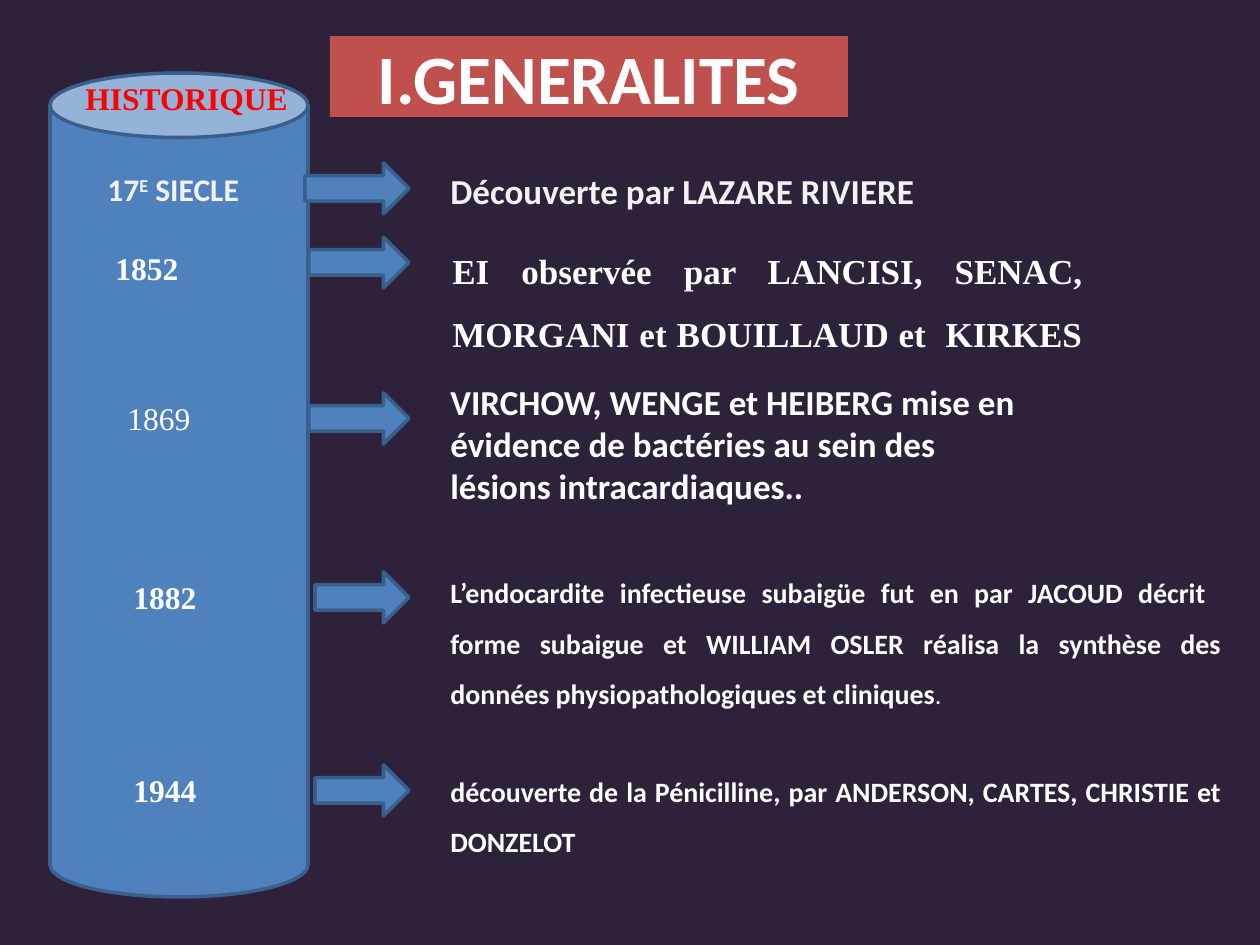
from dataclasses import dataclass

import pptx
import pptx.dml.color
import pptx.enum.shapes
import pptx.enum.text
import pptx.util

RGBColor = pptx.dml.color.RGBColor
Shape = pptx.enum.shapes.MSO_SHAPE
Align = pptx.enum.text.PP_ALIGN

NIGHT = RGBColor(0x2D, 0x22, 0x3A)
BLUE = RGBColor(0x4F, 0x81, 0xBD)
BLUE_EDGE = RGBColor(0x3A, 0x5F, 0x8C)
BRICK = RGBColor(0xC0, 0x50, 0x4D)
WHITE = RGBColor(0xFF, 0xFF, 0xFF)
PALE = RGBColor(0xF2, 0xF2, 0xF2)
RED = RGBColor(0xFF, 0x00, 0x00)

SANS = "Calibri"
SERIF = "Times New Roman"
PX_PER_INCH = 126
ARROW_TIP = 409
ARROW_HEIGHT = 51


@dataclass(frozen=True)
class Span:
    text: str
    size: float
    font: str = SANS
    color: RGBColor = WHITE
    bold: bool = True
    raised: bool = False


@dataclass(frozen=True)
class Para:
    spans: tuple[Span, ...]
    spread: bool = False  # justified with wide line spacing
    before: float = 0


@dataclass(frozen=True)
class Label:
    place: tuple[int, int, int, int]
    paras: tuple[Para, ...]
    wrap: bool = True


@dataclass(frozen=True)
class Event:
    arrow_left: int
    arrow_top: int
    date: Label


def px(length: int) -> int:
    return round(length * pptx.util.Inches(1) / PX_PER_INCH)


def add_span(para, item: Span) -> None:
    span = para.add_run()
    span.text = item.text
    span.font.size = pptx.util.Pt(item.size)
    span.font.name = item.font
    span.font.bold = item.bold
    span.font.color.rgb = item.color
    if item.raised:
        span._r.get_or_add_rPr().set("baseline", "30000")


def add_label(page, label: Label) -> None:
    box = page.shapes.add_textbox(*map(px, label.place))
    frame = box.text_frame
    frame.word_wrap = label.wrap
    frame.auto_size = pptx.enum.text.MSO_AUTO_SIZE.SHAPE_TO_FIT_TEXT
    for index, item in enumerate(label.paras):
        para = frame.add_paragraph() if index else frame.paragraphs[0]
        if item.spread:
            para.alignment = Align.JUSTIFY
            para.line_spacing = 1.5
            para.space_before = pptx.util.Pt(item.before)
        for span in item.spans:
            add_span(para, span)


def add_block(page, kind, place: tuple[int, int, int, int], fill: RGBColor,
              edge: RGBColor | None = None):
    block = page.shapes.add_shape(kind, *map(px, place))
    block.shadow.inherit = False
    block.fill.solid()
    block.fill.fore_color.rgb = fill
    if edge is None:
        block.line.fill.background()
    else:
        block.line.color.rgb = edge
        block.line.width = pptx.util.Pt(2)
    return block


def year(text: str, place: tuple[int, int, int, int], bold: bool = True) -> Label:
    return Label(place, (Para((Span(text, 18, SERIF, bold=bold),)),), wrap=False)


HEADING = Label((73, 73, 229, 89), (Para((Span("HISTORIQUE", 18, SERIF, RED),)),), wrap=False)

EVENTS = (
    Event(305, 163, Label((95, 164, 169, 50), (Para((
        Span("17", 18, color=PALE),
        Span("E", 18, color=PALE, raised=True),
        Span(" SIECLE", 18, color=PALE))),))),
    Event(309, 237, Label((103, 224, 169, 63), (
        Para((Span("1852", 18, SERIF),), spread=True, before=3.6),))),
    Event(309, 393, year("1869", (115, 393, 89, 51), bold=False)),
    Event(315, 572, year("1882", (121, 572, 97, 51))),
    Event(315, 765, year("1944", (121, 765, 89, 51))),
)

STORIES = (
    Label((438, 163, 627, 55), (
        Para((Span("Découverte par LAZARE RIVIERE", 20, color=PALE),)),)),
    Label((440, 222, 655, 132), (
        Para((Span("EI observée par LANCISI, SENAC, MORGANI et BOUILLAUD et  KIRKES ",
                   20, SERIF),), spread=True, before=4),)),
    Label((438, 374, 605, 140), (
        Para((Span("VIRCHOW, WENGE et HEIBERG mise en évidence de bactéries "
                   "au sein des lésions intracardiaques..", 20),)),)),
    Label((438, 553, 796, 318), (
        Para((Span("L’endocardite infectieuse subaigüe fut en par JACOUD décrit  "
                   "forme subaigue et WILLIAM OSLER réalisa la synthèse des "
                   "données physiopathologiques et cliniques", 16),
              Span(". ", 12)), spread=True, before=3.2),
        Para((Span("découverte de la Pénicilline, par ANDERSON, CARTES, "
                   "CHRISTIE et DONZELOT", 16),), spread=True, before=27))),
)


def main() -> None:
    deck = pptx.Presentation()
    deck.slide_width = pptx.util.Inches(10)
    deck.slide_height = pptx.util.Inches(7.5)
    page = deck.slides.add_slide(deck.slide_layouts[6])
    page.background.fill.solid()
    page.background.fill.fore_color.rgb = NIGHT

    # Timeline column
    add_block(page, Shape.CAN, (50, 73, 258, 824), BLUE, BLUE_EDGE)
    add_label(page, HEADING)

    # Dates and their arrows
    for event in EVENTS:
        place = (event.arrow_left, event.arrow_top,
                 ARROW_TIP - event.arrow_left, ARROW_HEIGHT)
        add_block(page, Shape.RIGHT_ARROW, place, BLUE, BLUE_EDGE)
        add_label(page, event.date)

    # Descriptions
    for story in STORIES:
        add_label(page, story)

    # Title banner
    banner = add_block(page, Shape.RECTANGLE, (330, 36, 518, 81), BRICK)
    banner.text_frame.vertical_anchor = pptx.enum.text.MSO_ANCHOR.MIDDLE
    para = banner.text_frame.paragraphs[0]
    para.alignment = Align.CENTER
    add_span(para, Span("I.GENERALITES", 39.6))

    deck.save("out.pptx")


if __name__ == "__main__":
    main()
